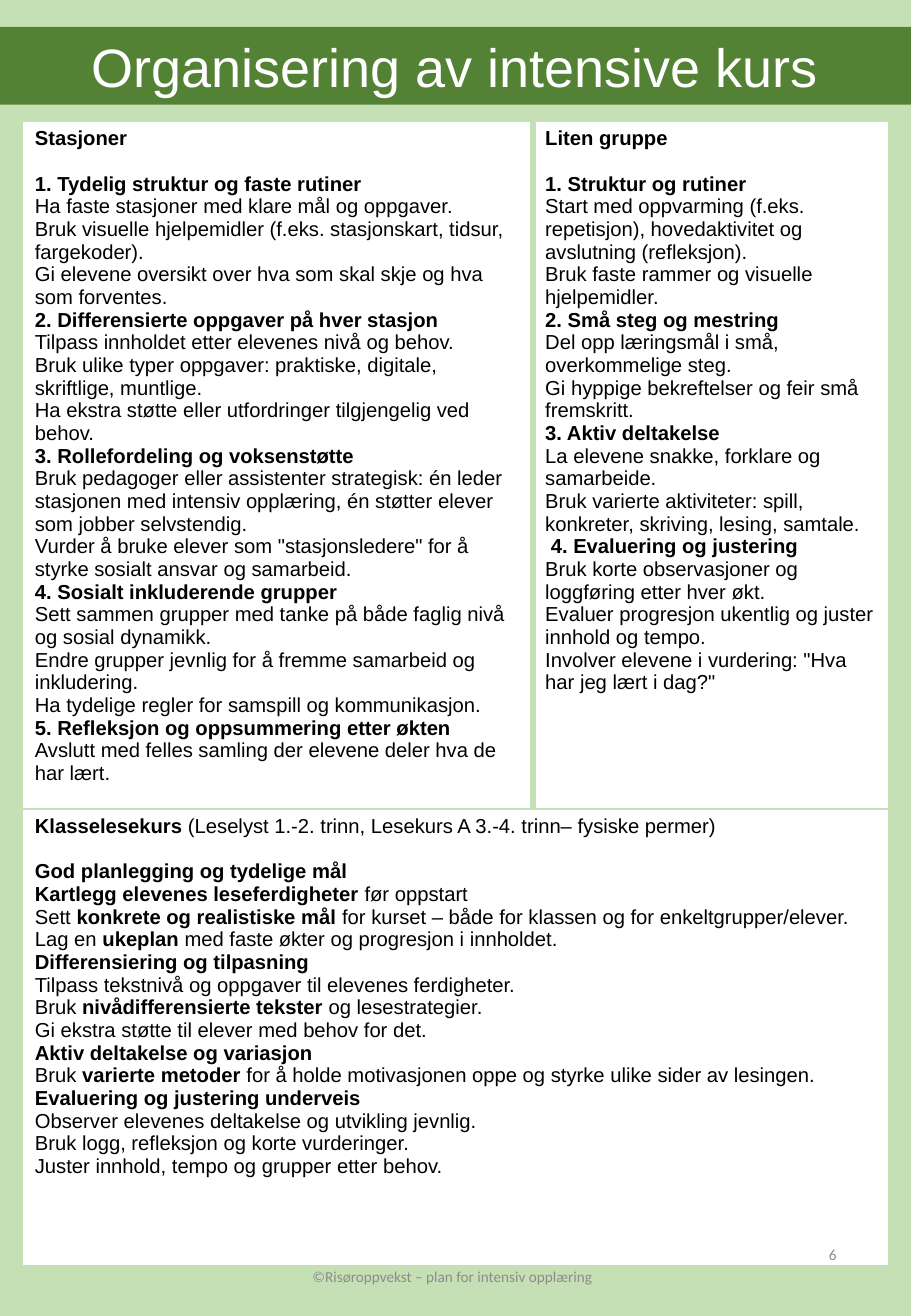
"""Build the slide on organising intensive courses."""
from lxml.etree import SubElement
from pptx import Presentation
from pptx.dml.color import RGBColor
from pptx.enum.text import MSO_ANCHOR as Anchor, MSO_AUTO_SIZE as AutoSize, PP_ALIGN as Align
from pptx.oxml.ns import qn
from pptx.util import Pt

PALE, GREEN, WHITE, BLACK, GREY = "C5E0B4", "548235", "FFFFFF", "000000", "8C8C8C"

STATIONS = [
    "**Stasjoner**",
    "**1. Tydelig struktur og faste rutiner**",
    "Ha faste stasjoner med klare mål og oppgaver.",
    "Bruk visuelle hjelpemidler (f.eks. stasjonskart, tidsur, fargekoder).",
    "Gi elevene oversikt over hva som skal skje og hva som forventes.",
    "**2. Differensierte oppgaver på hver stasjon**",
    "Tilpass innholdet etter elevenes nivå og behov.",
    "Bruk ulike typer oppgaver: praktiske, digitale, skriftlige, muntlige.",
    "Ha ekstra støtte eller utfordringer tilgjengelig ved behov.",
    "**3. Rollefordeling og voksenstøtte**",
    "Bruk pedagoger eller assistenter strategisk: én leder stasjonen med intensiv opplæring, "
    "én støtter elever som jobber selvstendig.",
    'Vurder å bruke elever som "stasjonsledere" for å styrke sosialt ansvar og samarbeid.',
    "**4. Sosialt inkluderende grupper**",
    "Sett sammen grupper med tanke på både faglig nivå og sosial dynamikk.",
    "Endre grupper jevnlig for å fremme samarbeid og inkludering.",
    "Ha tydelige regler for samspill og kommunikasjon.",
    "**5. Refleksjon og oppsummering etter økten**",
    "Avslutt med felles samling der elevene deler hva de har lært.",
]

SMALL_GROUP = [
    "**Liten gruppe**",
    "**1. Struktur og rutiner**",
    "Start med oppvarming (f.eks. repetisjon), hovedaktivitet og avslutning (refleksjon).",
    "Bruk faste rammer og visuelle hjelpemidler.",
    "**2. Små steg og mestring**",
    "Del opp læringsmål i små, overkommelige steg.",
    "Gi hyppige bekreftelser og feir små fremskritt.",
    "**3. Aktiv deltakelse**",
    "La elevene snakke, forklare og samarbeide.",
    "Bruk varierte aktiviteter: spill, konkreter, skriving, lesing, samtale.",
    "** 4. Evaluering og justering**",
    "Bruk korte observasjoner og loggføring etter hver økt.",
    "Evaluer progresjon ukentlig og juster innhold og tempo.",
    'Involver elevene i vurdering: "Hva har jeg lært i dag?"',
]

CLASS_COURSE = [
    "**Klasselesekurs **(Leselyst 1.-2. trinn, Lesekurs A 3.-4. trinn– fysiske permer)",
    "**God planlegging og tydelige mål**",
    "**Kartlegg elevenes leseferdigheter** før oppstart",
    "Sett **konkrete og realistiske mål** for kurset – både for klassen og for enkeltgrupper/elever.",
    "Lag en **ukeplan** med faste økter og progresjon i innholdet.",
    "**Differensiering og tilpasning**",
    "Tilpass tekstnivå og oppgaver til elevenes ferdigheter.",
    "Bruk **nivådifferensierte tekster** og lesestrategier.",
    "Gi ekstra støtte til elever med behov for det.",
    "**Aktiv deltakelse og variasjon**",
    "Bruk **varierte metoder** for å holde motivasjonen oppe og styrke ulike sider av lesingen.",
    "**Evaluering og justering underveis**",
    "Observer elevenes deltakelse og utvikling jevnlig.",
    "Bruk logg, refleksjon og korte vurderinger.",
    "Juster innhold, tempo og grupper etter behov.",
]


def color(hex_code):
    return RGBColor.from_string(hex_code)


def style(paragraph, font_name, size, hex_code, align=Align.LEFT):
    paragraph.alignment = align
    font = paragraph.font
    font.name, font.size, font.color.rgb = font_name, Pt(size), color(hex_code)


deck = Presentation()
deck.slide_width, deck.slide_height = Pt(540), Pt(780)
slide = deck.slides.add_slide(deck.slide_layouts[5])
slide.background.fill.solid()
slide.background.fill.fore_color.rgb = color(PALE)

title = slide.shapes.title
title.left, title.top, title.width, title.height = Pt(0), Pt(16), Pt(540), Pt(46)
title.fill.solid()
title.fill.fore_color.rgb = color(GREEN)
title.text_frame.text = "Organisering av intensive kurs"
title.text_frame.auto_size = AutoSize.NONE
title.text_frame.vertical_anchor = Anchor.MIDDLE
style(title.text_frame.paragraphs[0], "Arial", 32, WHITE, Align.CENTER)

courses = slide.shapes.add_table(2, 2, Pt(13.5), Pt(72), Pt(513.5), Pt(679.5)).table
courses.first_row = courses.horz_banding = False
for column, width in zip(courses.columns, (302.5, 211)):
    column.width = Pt(width)
for row, height in zip(courses.rows, (407.5, 272)):
    row.height = Pt(height)
courses.cell(1, 0).merge(courses.cell(1, 1))

for row, col, content, thick_side in (
    (0, 0, STATIONS, "R"),
    (0, 1, SMALL_GROUP, "L"),
    (1, 0, CLASS_COURSE, "B"),
):
    cell = courses.cell(row, col)
    for side in "LRTB":
        weight = Pt(4.5 if side == thick_side else 1)
        border = SubElement(cell._tc.get_or_add_tcPr(), qn(f"a:ln{side}"), w=str(weight))
        SubElement(SubElement(border, qn("a:solidFill")), qn("a:srgbClr"), val=PALE)
    cell.fill.solid()
    cell.fill.fore_color.rgb = color(WHITE)
    for number, line in enumerate(content):
        paragraph = cell.text_frame.add_paragraph() if number else cell.text_frame.paragraphs[0]
        style(paragraph, "Arial", 12, BLACK)
        paragraph.space_after = Pt(0 if number else 13.4)
        for position, part in enumerate(line.split("**")):
            if part:
                run = paragraph.add_run()
                run.text, run.font.bold = part, position % 2 == 1

for left, top, width, text, align in (
    (381.5, 723, 121.5, "6", Align.RIGHT),
    (177, 736, 182, "©Risøroppvekst – plan for intensiv opplæring", Align.CENTER),
):
    footer = slide.shapes.add_textbox(Pt(left), Pt(top), Pt(width), Pt(41.5)).text_frame
    footer.word_wrap = True
    footer.vertical_anchor = Anchor.MIDDLE
    footer.text = text
    style(footer.paragraphs[0], "Calibri", 9, GREY, align)

deck.save("out.pptx")
